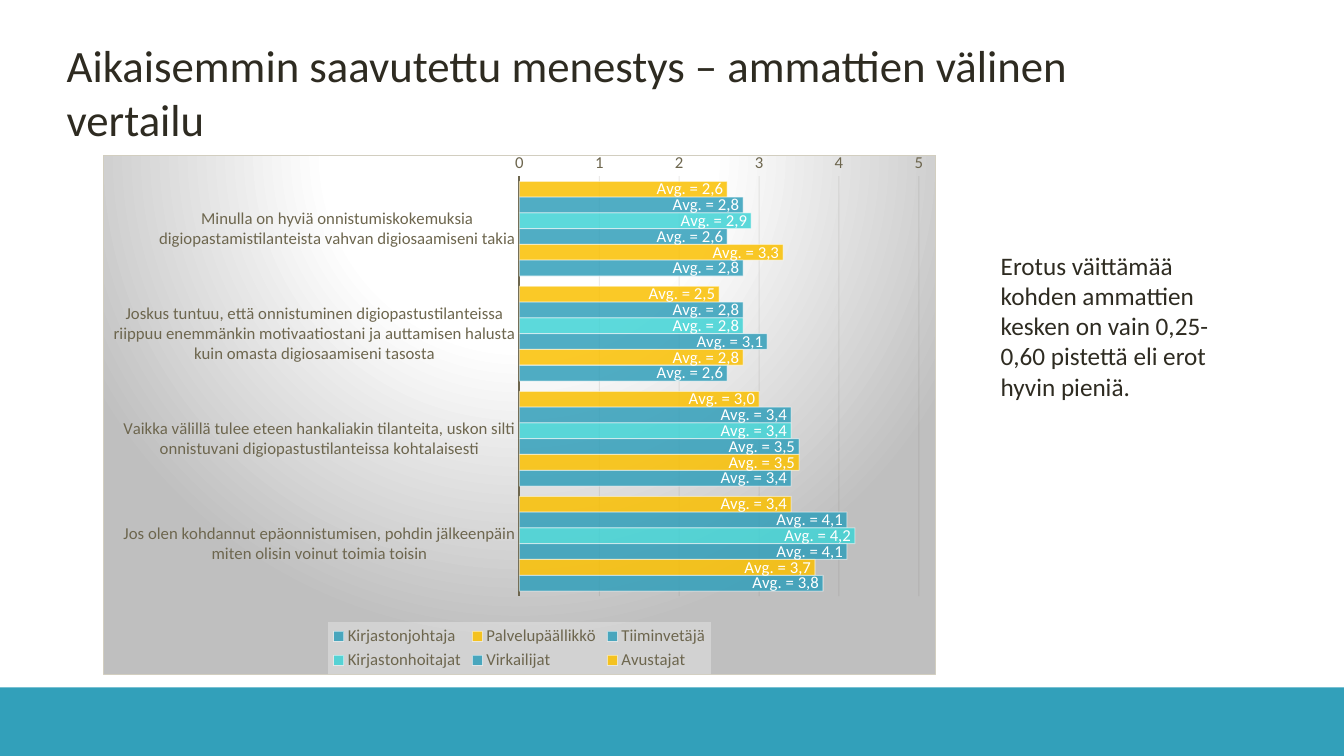
from lxml.etree import SubElement
from pptx import Presentation
from pptx.chart.data import CategoryChartData
from pptx.dml.color import RGBColor
from pptx.enum.chart import (XL_AXIS_CROSSES, XL_CHART_TYPE, XL_LABEL_POSITION,
                             XL_LEGEND_POSITION, XL_TICK_MARK)
from pptx.enum.shapes import MSO_SHAPE
from pptx.enum.text import MSO_ANCHOR
from pptx.oxml import parse_xml
from pptx.oxml.ns import nsdecls, qn
from pptx.util import Cm, Pt

FONT = "Calibri"
WHITE = RGBColor(0xFF, 0xFF, 0xFF)
INK = RGBColor(0x2E, 0x2B, 0x21)
OLIVE = RGBColor(0x6D, 0x66, 0x4E)
GRID = RGBColor(0x3B, 0x37, 0x2A)
BAND = RGBColor(0x32, 0xA0, 0xBA)
BLUE = RGBColor(0x32, 0x9F, 0xBA)
GOLD = RGBColor(0xFA, 0xC0, 0x02)
AQUA = RGBColor(0x40, 0xD3, 0xD5)

TOPICS = [
    "Minulla on hyviä onnistumiskokemuksia digiopastamistilanteista vahvan digiosaamiseni takia",
    "Joskus tuntuu, että onnistuminen digiopastustilanteissa riippuu enemmänkin "
    "motivaatiostani ja auttamisen halusta kuin omasta digiosaamiseni tasosta",
    "Vaikka välillä tulee eteen hankaliakin tilanteita, uskon silti onnistuvani "
    "digiopastustilanteissa kohtalaisesti",
    "Jos olen kohdannut epäonnistumisen, pohdin jälkeenpäin miten olisin voinut toimia toisin",
]
ROLES = [
    ("Avustajat", GOLD, (2.6, 2.5, 3.0, 3.4)),
    ("Virkailijat", BLUE, (2.8, 2.8, 3.4, 4.1)),
    ("Kirjastonhoitajat", AQUA, (2.9, 2.8, 3.4, 4.2)),
    ("Tiiminvetäjä", BLUE, (2.6, 3.1, 3.5, 4.1)),
    ("Palvelupäällikkö", GOLD, (3.3, 2.8, 3.5, 3.7)),
    ("Kirjastonjohtaja", BLUE, (2.8, 2.6, 3.4, 3.8)),
]
BACK = f"""<c:spPr {nsdecls('c', 'a')}><a:gradFill><a:gsLst>
<a:gs pos="0"><a:srgbClr val="FFFFFF"/></a:gs>
<a:gs pos="39000"><a:srgbClr val="FFFFFF"/></a:gs>
<a:gs pos="100000"><a:srgbClr val="BFBFBF"/></a:gs></a:gsLst>
<a:path path="circle"><a:fillToRect l="50000" t="-80000" r="50000" b="180000"/></a:path>
</a:gradFill><a:ln w="9525"><a:solidFill><a:srgbClr val="D2CEC0"/></a:solidFill></a:ln></c:spPr>"""
PANEL = f"""<c:spPr {nsdecls('c', 'a')}><a:solidFill><a:srgbClr val="F2F2F2">
<a:alpha val="39000"/></a:srgbClr></a:solidFill></c:spPr>"""


def style(font, size, color):
    font.name = FONT
    font.size = Pt(size)
    font.bold = False
    font.color.rgb = color


def fade(node, *rates):
    for tint, rate in zip(node.iter(qn("a:srgbClr")), rates):
        SubElement(tint, qn("a:alpha")).set("val", str(rate * 1000))


def layout(x, y, wide, high, inner=False):
    target = '<c:layoutTarget val="inner"/>' if inner else ""
    return parse_xml(
        f'<c:layout {nsdecls("c")}><c:manualLayout>{target}'
        '<c:xMode val="edge"/><c:yMode val="edge"/>'
        f'<c:x val="{x}"/><c:y val="{y}"/><c:w val="{wide}"/><c:h val="{high}"/>'
        '</c:manualLayout></c:layout>')


def add_band(slide, box):
    band = slide.shapes.add_shape(MSO_SHAPE.RECTANGLE, *box)
    band.shadow.inherit = False
    band.fill.solid()
    band.fill.fore_color.rgb = BAND
    band.line.fill.background()


def add_text(slide, box, text, size, anchor):
    frame = slide.shapes.add_textbox(*box).text_frame
    frame.word_wrap = True
    frame.vertical_anchor = anchor
    frame.margin_left = frame.margin_right = Cm(0.33)
    frame.margin_top = frame.margin_bottom = Cm(0.18)
    run = frame.paragraphs[0].add_run()
    run.text = text
    style(run.font, size, INK)


def style_role(role, color):
    role.format.fill.solid()
    role.format.fill.fore_color.rgb = color
    role.format.line.color.rgb = WHITE
    role.format.line.width = Pt(0.75)
    fade(role._element.spPr, 85, 50)
    for spot, value in enumerate(role.values):
        label = role.points[spot].data_label
        run = label.text_frame.paragraphs[0].add_run()
        run.text = f"Avg. = {value:.1f}".replace(".", ",").replace("Avg,", "Avg.")
        style(run.font, 12, WHITE)
        label.position = XL_LABEL_POSITION.INSIDE_END


def style_axes(chart):
    topic, score = chart.category_axis, chart.value_axis
    for axis in (topic, score):
        axis.major_tick_mark = axis.minor_tick_mark = XL_TICK_MARK.NONE
        style(axis.tick_labels.font, 12, OLIVE)
    topic.reverse_order = True
    topic.crosses = XL_AXIS_CROSSES.MAXIMUM
    topic.format.line.color.rgb = OLIVE
    topic.format.line.width = Pt(1.5)
    score.minimum_scale, score.maximum_scale, score.major_unit = 0, 5, 1
    score.tick_labels.number_format = "General"
    score.tick_labels.number_format_is_linked = False
    score.format.line.fill.background()
    rule = score.major_gridlines.format.line
    rule.color.rgb = GRID
    rule.width = Pt(0.75)
    fade(score._element.find(qn("c:majorGridlines")), 10)


def add_legend(chart):
    chart.has_legend = True
    legend = chart.legend
    legend.position = XL_LEGEND_POSITION.BOTTOM
    legend.include_in_layout = False
    style(legend.font, 12, OLIVE)
    node = legend._element
    for old in node.findall(qn("c:layout")):
        node.remove(old)
    node.find(qn("c:legendPos")).addnext(layout(0.27, 0.9, 0.46, 0.1))
    node.find(qn("c:overlay")).addnext(parse_xml(PANEL))


def add_bars(slide, box):
    data = CategoryChartData()
    data.categories = TOPICS
    for name, _, values in ROLES:
        data.add_series(name, values)
    chart = slide.shapes.add_chart(XL_CHART_TYPE.BAR_CLUSTERED, *box, data).chart
    chart.has_title = False
    style(chart.font, 10, INK)
    plot = chart.plots[0]
    plot.gap_width = 65
    plot.overlap = 0
    plot.vary_by_categories = False
    for role, (_, color, _) in zip(plot.series, ROLES):
        style_role(role, color)
    style_axes(chart)
    add_legend(chart)
    space = chart._chartSpace
    space.find(qn("c:chart")).addnext(parse_xml(BACK))
    area = space.find(".//" + qn("c:plotArea"))
    for old in area.findall(qn("c:layout")):
        area.remove(old)
    area.insert(0, layout(0.5, 0.04, 0.48, 0.81, inner=True))


def main():
    deck = Presentation()
    deck.slide_width, deck.slide_height = Cm(33.87), Cm(19.05)
    slide = deck.slides.add_slide(deck.slide_layouts[6])
    add_band(slide, (Cm(0), Cm(17.32), Cm(33.87), Cm(1.73)))
    add_text(slide, (Cm(1.35), Cm(1.45), Cm(29.54), Cm(1.7)),
             "Aikaisemmin saavutettu menestys – ammattien välinen vertailu",
             32, MSO_ANCHOR.MIDDLE)
    add_bars(slide, (Cm(2.59), Cm(3.84), Cm(21), Cm(13.16)))
    add_text(slide, (Cm(24.89), Cm(6.12), Cm(6.65), Cm(4.19)),
             "Erotus väittämää kohden ammattien kesken on vain 0,25-0,60 pistettä "
             "eli erot hyvin pieniä.", 18, MSO_ANCHOR.TOP)
    deck.save("out.pptx")


if __name__ == "__main__":
    main()
